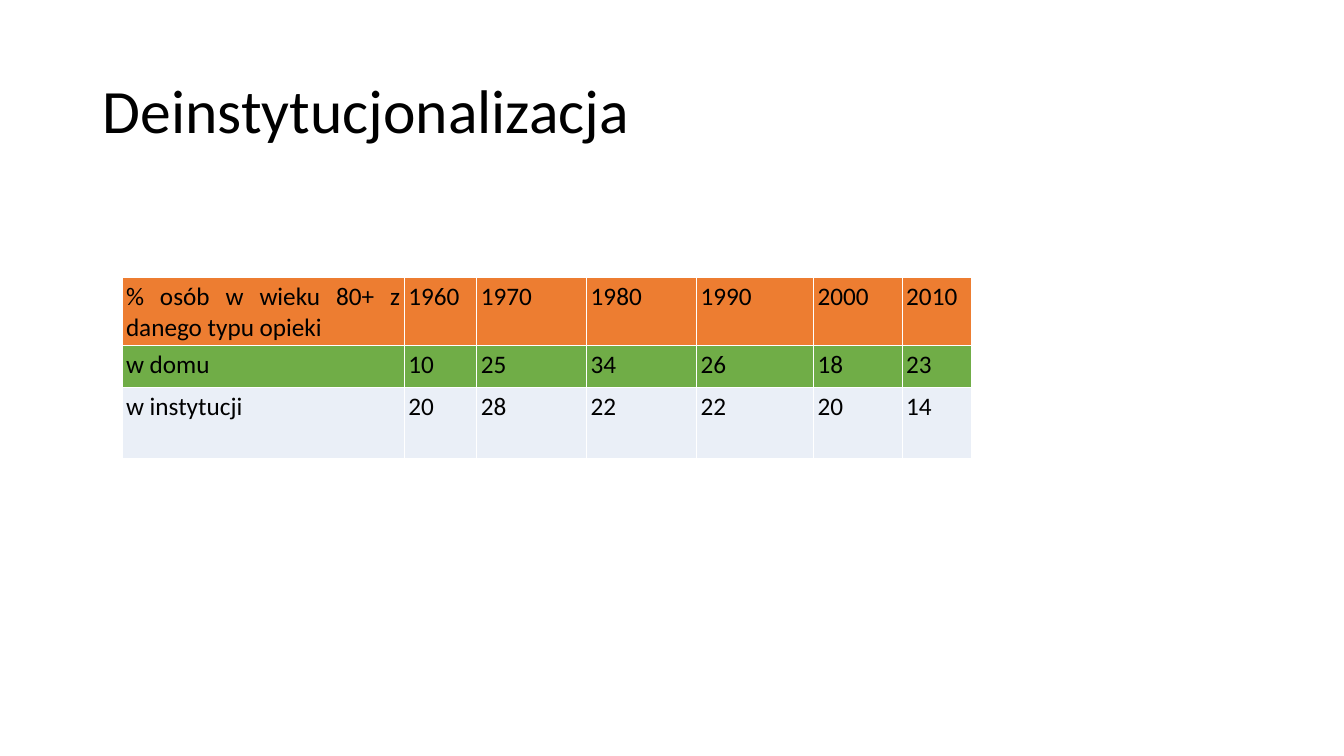
from dataclasses import dataclass

import pptx
import pptx.dml.color
import pptx.enum.text
import pptx.util
from lxml import etree
from pptx.oxml.ns import qn

WIDE, HIGH = pptx.util.Inches(13.33), pptx.util.Inches(7.5)
FONT = "Calibri"
BLACK, WHITE = "000000", "FFFFFF"


@dataclass
class Row:
    high: float  # percent of slide height
    fill: str
    label: str
    values: tuple[int, ...]


# Column widths in percent of slide width
COLS = (21, 5.4, 8.18, 8.18, 8.7, 6.6, 5.2)
ROWS = (
    Row(9.07, "ED7D31", "% osób w wieku 80+ z danego typu opieki",
        (1960, 1970, 1980, 1990, 2000, 2010)),
    Row(5.47, "70AD47", "w domu", (10, 25, 34, 26, 18, 23)),
    Row(9.47, "EAEFF7", "w instytucji", (20, 28, 22, 22, 20, 14)),
)


def across(share: float) -> int:
    return round(WIDE * share / 100)


def down(share: float) -> int:
    return round(HIGH * share / 100)


def color(code: str) -> pptx.dml.color.RGBColor:
    return pptx.dml.color.RGBColor.from_string(code)


def style(para, size: float) -> None:
    para.font.name = FONT
    para.font.size = pptx.util.Pt(size)
    para.font.color.rgb = color(BLACK)


def border(cell) -> None:
    props = cell._tc.get_or_add_tcPr()
    for side in "LRTB":
        line = etree.SubElement(props, qn(f"a:ln{side}"), w=str(pptx.util.Pt(1)))
        solid = etree.SubElement(line, qn("a:solidFill"))
        etree.SubElement(solid, qn("a:srgbClr"), val=WHITE)


def fill_cell(cell, text: str, fill: str) -> None:
    inset = pptx.util.Inches(0.04)
    cell.margin_left = cell.margin_right = inset
    cell.margin_top = cell.margin_bottom = inset
    border(cell)
    cell.fill.solid()
    cell.fill.fore_color.rgb = color(fill)
    cell.text = text
    para = cell.text_frame.paragraphs[0]
    para.alignment = pptx.enum.text.PP_ALIGN.JUSTIFY
    style(para, 18)


def add_title(slide, text: str) -> None:
    box = slide.shapes.add_textbox(across(6.9), down(5.33), across(86.25), down(19.33))
    frame = box.text_frame
    frame.word_wrap = True
    frame.vertical_anchor = pptx.enum.text.MSO_ANCHOR.MIDDLE
    para = frame.paragraphs[0]
    para.text = text
    para.line_spacing = 0.9
    style(para, 44)


def add_grid(slide, rows: tuple[Row, ...]) -> None:
    shape = slide.shapes.add_table(
        len(rows), len(COLS), across(9.08), down(36.67),
        across(sum(COLS)), down(sum(row.high for row in rows)))
    table = shape.table
    table.first_row = table.horz_banding = False
    for col, wide in zip(table.columns, COLS):
        col.width = across(wide)
    for line, row in zip(table.rows, rows):
        line.height = down(row.high)
        for cell, text in zip(line.cells, (row.label, *row.values)):
            fill_cell(cell, str(text), row.fill)


def main() -> None:
    deck = pptx.Presentation()
    deck.slide_width, deck.slide_height = WIDE, HIGH
    slide = deck.slides.add_slide(deck.slide_layouts[6])
    # Heading
    add_title(slide, "Deinstytucjonalizacja")
    # Share of people aged 80+ by type of care
    add_grid(slide, ROWS)
    deck.save("out.pptx")


if __name__ == "__main__":
    main()
